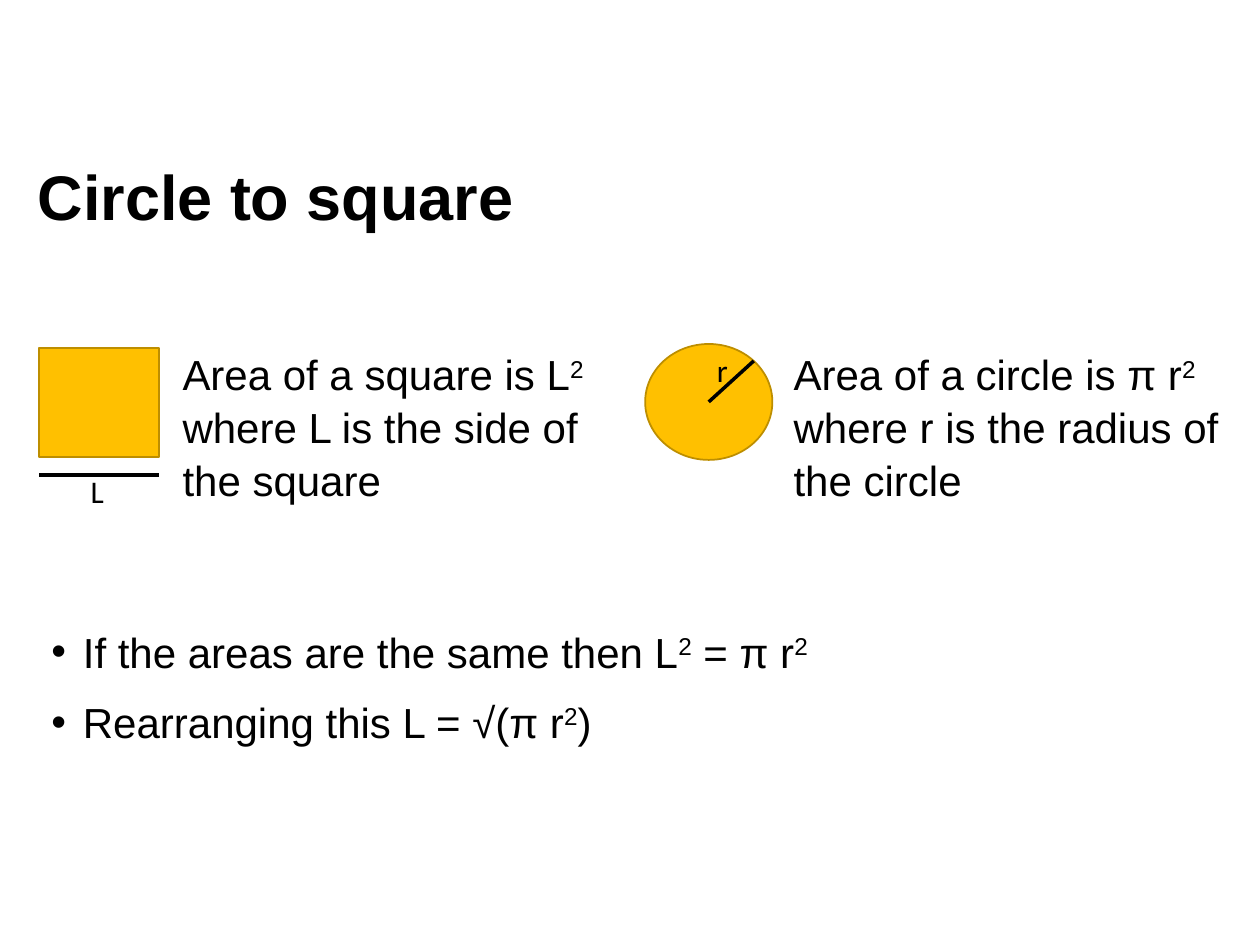
from math import sqrt

from lxml import etree
from pptx import Presentation
from pptx.dml.color import RGBColor
from pptx.enum.shapes import MSO_CONNECTOR, MSO_SHAPE
from pptx.enum.text import MSO_ANCHOR
from pptx.oxml.ns import qn
from pptx.util import Inches, Pt

RECT = MSO_SHAPE.RECTANGLE
OVAL = MSO_SHAPE.OVAL
LINE = MSO_CONNECTOR.STRAIGHT
TOP, MIDDLE = MSO_ANCHOR.TOP, MSO_ANCHOR.MIDDLE

COLS, ROWS = 100, 75
BLACK, GOLD, BROWN = "000000", "FFC000", "BD8E00"


def paint(code):
    return RGBColor.from_string(code)


class Board:
    font = "Arial"
    size = 24
    space = 10

    def __init__(self, deck):
        self.slide = deck.slides.add_slide(deck.slide_layouts[6])
        self.shapes = self.slide.shapes
        self.col = deck.slide_width / COLS
        self.row = deck.slide_height / ROWS

    def place(self, left, top, width, height):
        return (round(left * self.col), round(top * self.row),
                round(width * self.col), round(height * self.row))

    def text(self, box, lines, size=size, font=font, bold=False,
             lead=1.05, wrap=True, anchor=TOP, dots=False):
        frame = self.shapes.add_textbox(*self.place(*box)).text_frame
        frame.word_wrap = wrap
        frame.vertical_anchor = anchor
        for i, line in enumerate(lines):
            para = frame.add_paragraph() if i else frame.paragraphs[0]
            if dots:
                self.dot(para)
            para.line_spacing = lead
            para.space_before = Pt(self.space if i else 0)
            for j, part in enumerate(line.split("^")):
                run = para.add_run()
                run.text = part
                run.font.name = font
                run.font.size = Pt(size)
                run.font.bold = bold
                run.font.color.rgb = paint(BLACK)
                if j % 2:
                    run.font._element.set("baseline", "30000")

    def dot(self, para):
        props = para._p.get_or_add_pPr()
        props.set("marL", str(Inches(0.25)))
        props.set("indent", str(Inches(-0.25)))
        etree.SubElement(props, qn("a:buFont")).set("typeface", self.font)
        etree.SubElement(props, qn("a:buChar")).set("char", "•")

    def shape(self, kind, box):
        item = self.shapes.add_shape(kind, *self.place(*box))
        item.shadow.inherit = False
        item.fill.solid()
        item.fill.fore_color.rgb = paint(GOLD)
        item.line.color.rgb = paint(BROWN)
        item.line.width = Pt(1)

    def line(self, start, end):
        ends = self.place(*start, *end)
        item = self.shapes.add_connector(LINE, *ends)
        item.line.color.rgb = paint(BLACK)
        item.line.width = Pt(2)
        etree.SubElement(item._element.spPr, qn("a:effectLst"))


def main():
    deck = Presentation()
    deck.slide_width, deck.slide_height = Inches(10), Inches(7.5)
    board = Board(deck)

    board.text((2, 12, 43.1, 7.7), ["Circle to square"], size=36,
               bold=True, lead=0.9, anchor=MIDDLE)

    square = left, top, width, height = 3.1, 27.6, 9.5, 8.7
    board.shape(RECT, square)
    base = top + height + 1.4
    board.line((left, base), (left + width, base))
    board.text((13.5, 27, 36.9, 14.1),
               ["Area of a square is L^2^ where L is the side of the square"])

    circle = left, top, width, height = 51.2, 27.3, 10.1, 9.2
    board.shape(OVAL, circle)
    mid = left + width / 2, top + height / 2
    rim = mid[0] + width / sqrt(8), mid[1] - height / sqrt(8)
    board.line(mid, rim)
    board.text((62, 27, 36.9, 13.9),
               ["Area of a circle is π r^2^ where r is the radius of the circle"])

    for name, box in (("r", (55.9, 27.4, 2.9, 4)), ("L", (6.2, 37, 3.1, 4))):
        board.text(box, [name], size=18, font="Calibri", lead=1, wrap=False)

    board.text((3.1, 49, 86.7, 13.9),
               ["If the areas are the same then L^2^ = π r^2",
                "Rearranging this L = √(π r^2^)"], dots=True)

    deck.save("out.pptx")


if __name__ == "__main__":
    main()
